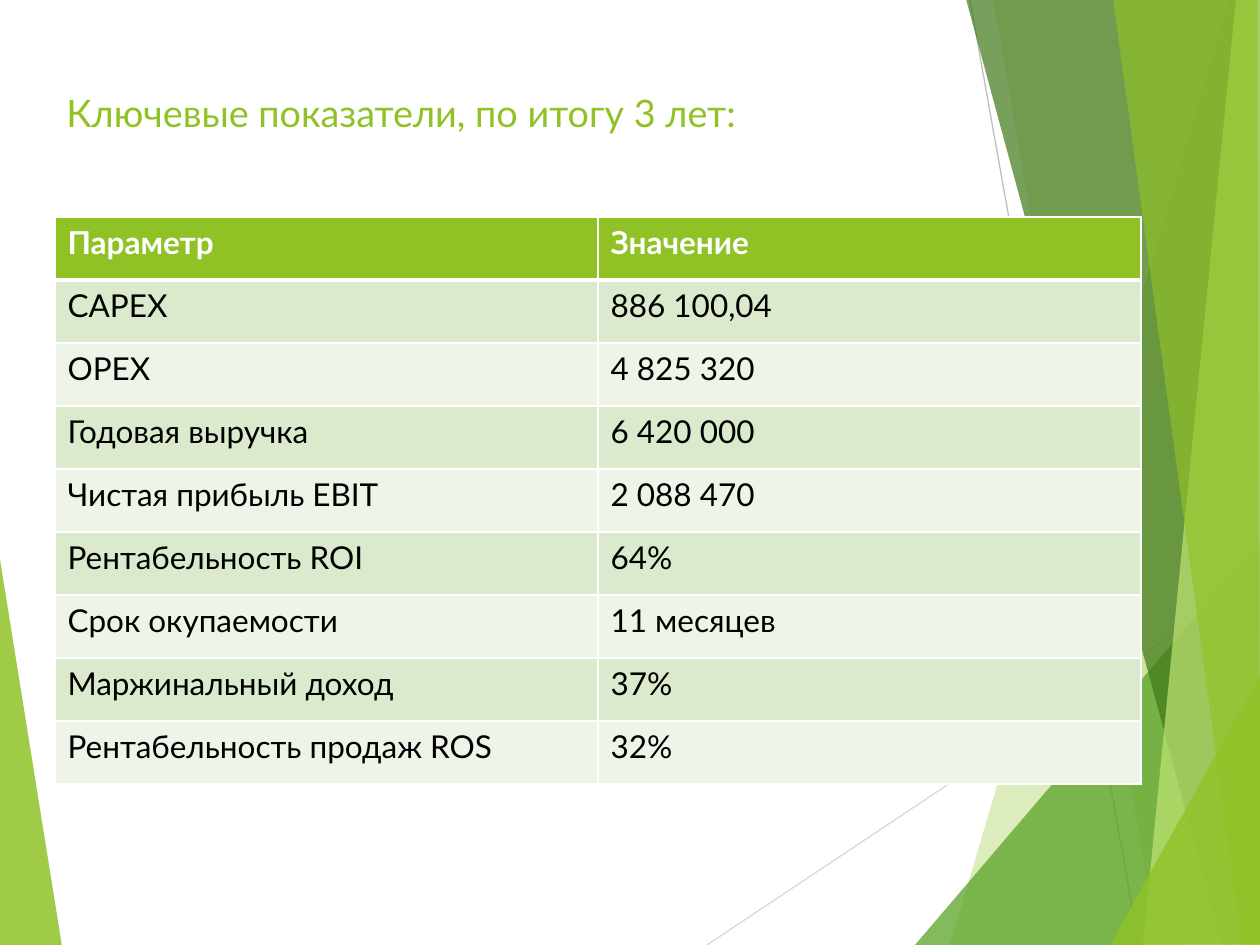
"""Build the key indicators slide: faceted green backdrop, title and table."""
from dataclasses import dataclass

from lxml.etree import SubElement
from pptx import Presentation
from pptx.dml.color import RGBColor
from pptx.enum.shapes import MSO_CONNECTOR
from pptx.enum.text import MSO_ANCHOR
from pptx.oxml.ns import qn
from pptx.util import Emu, Pt

EMU_PER_PX = 914400 / 126
FONT = "Lato"
GREEN, WHITE, BLACK = "90C226", "FFFFFF", "000000"
BANDS = ("DBE9CD", "EEF4E8")
TABLE_LEFT, TABLE_TOP, COLUMN_WIDTH, ROW_HEIGHT = 55, 217, 543, 63


@dataclass(frozen=True)
class Facet:
    points: tuple[tuple[int, int], ...]
    color: str
    opacity: int


@dataclass(frozen=True)
class Ray:
    start: tuple[int, int]
    end: tuple[int, int]
    color: str


@dataclass(frozen=True)
class Indicator:
    name: str
    value: str


LEFT_FACET = Facet(((-1, 553), (62, 946), (-1, 945)), GREEN, 85)
RAYS = (
    Ray((707, 945), (1261, 576), "D9D9D9"),
    Ray((970, 0), (1139, 945), "BFBFBF"),
)
RIGHT_FACETS = (
    Facet(((1229, 0), (950, 945), (1263, 946), (1261, 1)), GREEN, 30),
    Facet(((993, -1), (1158, 945), (1261, 945), (1261, -1)), GREEN, 20),
    Facet(((915, 945), (1260, 541), (1261, 945)), "54A021", 72),
    Facet(((966, -1), (1222, 945), (1261, 944), (1261, -1)), "3F7819", 70),
    Facet(((1236, -1), (1143, 945), (1261, 945), (1260, -1)), "C0E474", 70),
    Facet(((1113, -1), (1242, 945), (1260, 945), (1257, -1)), GREEN, 65),
    Facet(((1110, 945), (1261, 674), (1261, 944)), GREEN, 80),
)
HEADER = Indicator("Параметр", "Значение")
INDICATORS = (
    Indicator("CAPEX", "886 100,04"),
    Indicator("OPEX", "4 825 320"),
    Indicator("Годовая выручка", "6 420 000"),
    Indicator("Чистая прибыль EBIT", "2 088 470"),
    Indicator("Рентабельность ROI", "64%"),
    Indicator("Срок окупаемости", "11 месяцев"),
    Indicator("Маржинальный доход", "37%"),
    Indicator("Рентабельность продаж ROS", "32%"),
)


def px(length: int) -> Emu:
    """Turn pixels into EMU."""
    return Emu(round(length * EMU_PER_PX))


def rgb(color: str) -> RGBColor:
    """Turn a hex string into a colour."""
    return RGBColor.from_string(color)


def add_span(para, text: str, size: float, color: str, bold: bool = False) -> None:
    """Add one formatted run to a paragraph."""
    span = para.add_run()
    span.text = text
    span.font.name = FONT
    span.font.size = Pt(size)
    span.font.bold = bold
    span.font.color.rgb = rgb(color)


def draw_facet(page, facet: Facet) -> None:
    """Draw a translucent polygon."""
    builder = page.shapes.build_freeform(*facet.points[0], scale=EMU_PER_PX)
    builder.add_line_segments(facet.points[1:], close=True)
    shape = builder.convert_to_shape()
    shape.shadow.inherit = False
    shape.line.fill.background()
    shape.fill.solid()
    shape.fill.fore_color.rgb = rgb(facet.color)
    color_node = shape.fill._xPr.find(qn("a:solidFill"))[0]
    SubElement(color_node, qn("a:alpha"), val=str(facet.opacity * 1000))


def draw_ray(page, ray: Ray) -> None:
    """Draw a thin straight line."""
    line = page.shapes.add_connector(
        MSO_CONNECTOR.STRAIGHT, *map(px, ray.start + ray.end))
    line.line.color.rgb = rgb(ray.color)
    line.line.width = Pt(0.75)
    SubElement(line._element.spPr, qn("a:effectLst"))


def draw_title(page, text: str) -> None:
    """Write the slide title."""
    box = page.shapes.add_textbox(px(54), px(84), px(1014), px(102))
    box.text_frame.word_wrap = True
    box.text_frame.vertical_anchor = MSO_ANCHOR.TOP
    add_span(box.text_frame.paragraphs[0], text, 21.6, GREEN)


def set_borders(cell, top: int, bottom: int) -> None:
    """Give a cell white borders, with top and bottom widths in points."""
    properties = cell._tc.get_or_add_tcPr()
    for side, width in (("L", 1), ("R", 1), ("T", top), ("B", bottom)):
        border = SubElement(properties, qn(f"a:ln{side}"), w=str(Pt(width)))
        fill = SubElement(border, qn("a:solidFill"))
        SubElement(fill, qn("a:srgbClr"), val=WHITE)


def draw_table(page, header: Indicator, indicators: tuple[Indicator, ...]) -> None:
    """Draw the banded table of indicators."""
    rows = (header, *indicators)
    table = page.shapes.add_table(
        len(rows), 2, px(TABLE_LEFT), px(TABLE_TOP),
        px(2 * COLUMN_WIDTH), px(ROW_HEIGHT * len(rows))).table
    for column in table.columns:
        column.width = px(COLUMN_WIDTH)
    for index, indicator in enumerate(rows):
        table.rows[index].height = px(ROW_HEIGHT)
        is_header = index == 0
        background = GREEN if is_header else BANDS[(index - 1) % 2]
        for column, text in enumerate((indicator.name, indicator.value)):
            cell = table.cell(index, column)
            set_borders(cell, 3 if index == 1 else 1, 3 if is_header else 1)
            cell.fill.solid()
            cell.fill.fore_color.rgb = rgb(background)
            add_span(cell.text_frame.paragraphs[0], text, 18,
                     WHITE if is_header else BLACK, is_header)


def main() -> None:
    """Build and save the deck."""
    deck = Presentation()
    deck.slide_width, deck.slide_height = px(1260), px(945)
    page = deck.slides.add_slide(deck.slide_layouts[6])
    draw_facet(page, LEFT_FACET)
    for ray in RAYS:
        draw_ray(page, ray)
    for facet in RIGHT_FACETS:
        draw_facet(page, facet)
    draw_title(page, "Ключевые показатели, по итогу 3 лет:")
    draw_table(page, HEADER, INDICATORS)
    deck.save("out.pptx")


if __name__ == "__main__":
    main()
